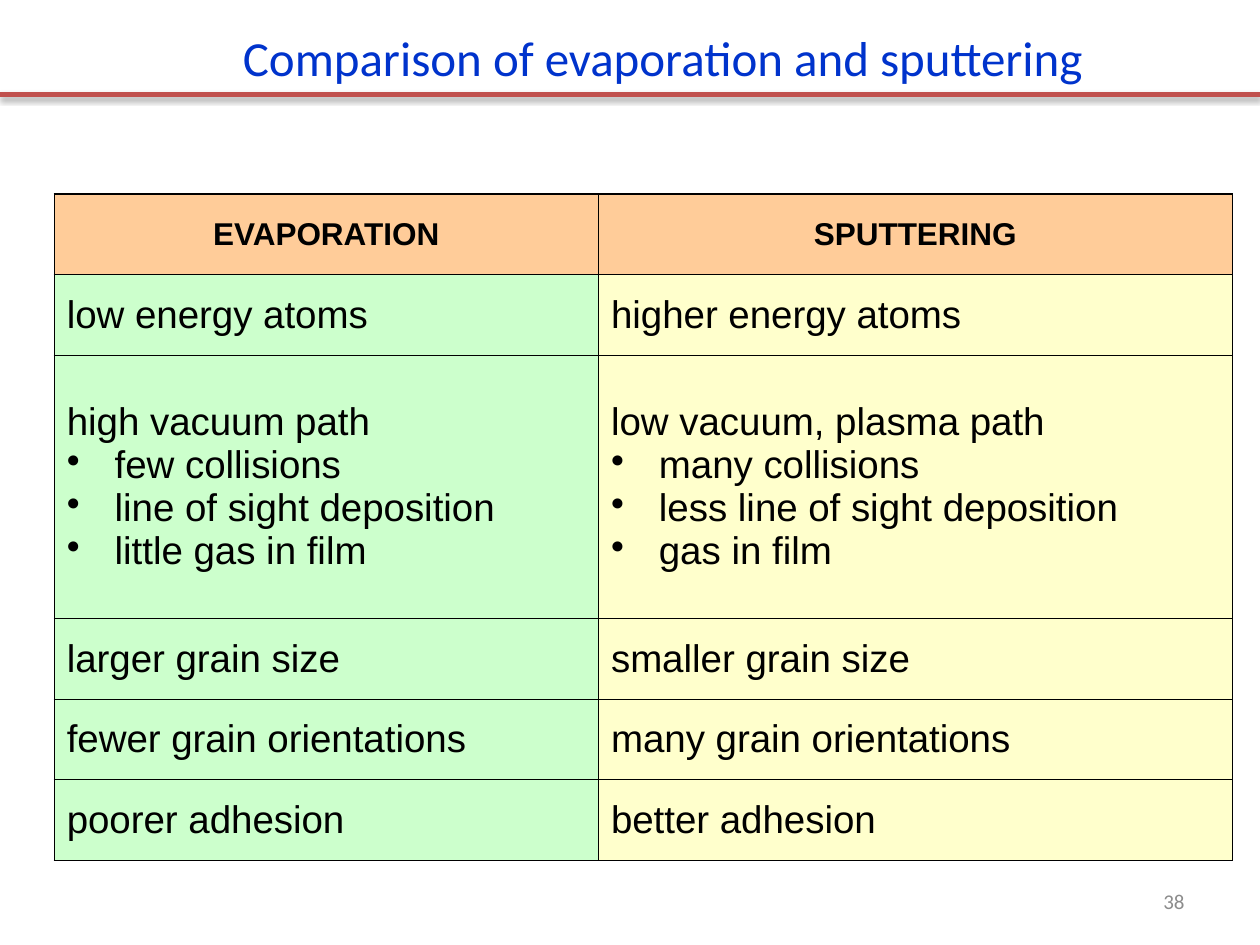
from lxml import etree
from pptx import Presentation
from pptx import util as u
from pptx.dml.color import RGBColor
from pptx.enum import shapes, text
from pptx.oxml import parse_xml
from pptx.oxml.ns import qn

TITLE = "Comparison of evaporation and sputtering"
PAGE = "38"
HEADERS = ("EVAPORATION", "SPUTTERING")
ROWS = [
    (["low energy atoms"], ["higher energy atoms"]),
    (["high vacuum path", "few collisions", "line of sight deposition", "little gas in film"],
     ["low vacuum, plasma path", "many collisions", "less line of sight deposition", "gas in film"]),
    (["larger grain size"], ["smaller grain size"]),
    (["fewer grain orientations"], ["many grain orientations"]),
    (["poorer adhesion"], ["better adhesion"]),
]
COLUMN_WIDTHS = (4.32, 5.03)
ROW_HEIGHT, TALL_ROW_HEIGHT = 0.64, 2.09
TABLE_LEFT, TABLE_TOP = 0.43, 1.54
INDENT = u.Inches(0.38)

BLACK = RGBColor(0x00, 0x00, 0x00)
BLUE = RGBColor(0x00, 0x33, 0xCC)
RED = RGBColor(0xC0, 0x50, 0x4D)
GREY = RGBColor(0x8C, 0x8C, 0x8C)
ORANGE = RGBColor(0xFF, 0xCC, 0x99)
GREEN = RGBColor(0xCC, 0xFF, 0xCC)
YELLOW = RGBColor(0xFF, 0xFF, 0xCC)

A = 'xmlns:a="http://schemas.openxmlformats.org/drawingml/2006/main"'
BORDER = (f'<a:%s {A} w="9525"><a:solidFill><a:srgbClr val="{BLACK}"/></a:solidFill>'
          '<a:prstDash val="solid"/></a:%s>')
RULE_SHADOW = (f'<a:effectLst {A}><a:outerShdw blurRad="{u.Pt(3.1)}" dist="{u.Pt(1.6)}" '
               f'dir="5400000" rotWithShape="0"><a:srgbClr val="{BLACK}">'
               '<a:alpha val="38000"/></a:srgbClr></a:outerShdw></a:effectLst>')


def style(paragraph, font_name, size, color, bold=False):
    for run in paragraph.runs:
        run.font.name = font_name
        run.font.size = u.Pt(size)
        run.font.color.rgb = color
        run.font.bold = bold


def fill_cell(cell, lines, fill, size, header=False):
    cell.vertical_anchor = text.MSO_ANCHOR.MIDDLE
    properties = cell._tc.get_or_add_tcPr()
    for side in ("lnL", "lnR", "lnT", "lnB"):
        properties.append(parse_xml(BORDER % (side, side)))
    cell.fill.solid()
    cell.fill.fore_color.rgb = fill
    cell.text_frame.text = "\n".join(lines)
    for index, paragraph in enumerate(cell.text_frame.paragraphs):
        paragraph.alignment = text.PP_ALIGN.CENTER if header else text.PP_ALIGN.LEFT
        layout = paragraph._p.get_or_add_pPr()
        layout.set("marL", str(INDENT))
        layout.set("indent", str(-INDENT))
        if index:
            etree.SubElement(layout, qn("a:buChar")).set("char", "•")
        else:
            etree.SubElement(layout, qn("a:buNone"))
        style(paragraph, "Arial", size, BLACK, header)


def add_comparison(slide):
    heights = [ROW_HEIGHT] + [TALL_ROW_HEIGHT if len(left) > 1 else ROW_HEIGHT for left, _ in ROWS]
    table = slide.shapes.add_table(
        len(heights), len(HEADERS), u.Inches(TABLE_LEFT), u.Inches(TABLE_TOP),
        u.Inches(sum(COLUMN_WIDTHS)), u.Inches(sum(heights))).table
    for column, width in zip(table.columns, COLUMN_WIDTHS):
        column.width = u.Inches(width)
    for row, height in zip(table.rows, heights):
        row.height = u.Inches(height)
    for column, header in enumerate(HEADERS):
        fill_cell(table.cell(0, column), [header], ORANGE, 18, header=True)
    for row, entries in enumerate(ROWS, start=1):
        for column, (lines, fill) in enumerate(zip(entries, (GREEN, YELLOW))):
            fill_cell(table.cell(row, column), lines, fill, 22)


def add_label(slide, words, box, size, color, align, anchor, wrap):
    frame = slide.shapes.add_textbox(*map(u.Inches, box)).text_frame
    frame.word_wrap = wrap
    frame.vertical_anchor = anchor
    frame.text = words
    frame.paragraphs[0].alignment = align
    style(frame.paragraphs[0], "Calibri", size, color)
    return frame


def main():
    deck = Presentation()
    deck.slide_width, deck.slide_height = u.Inches(10), u.Inches(7.5)
    slide = deck.slides.add_slide(deck.slide_layouts[6])

    add_comparison(slide)

    rule_y = deck.slide_height // 10
    rule = slide.shapes.add_connector(
        shapes.MSO_CONNECTOR.STRAIGHT, 0, rule_y, deck.slide_width, rule_y)
    rule.line.color.rgb = RED
    rule.line.width = u.Pt(3)
    rule._element.spPr.append(parse_xml(RULE_SHADOW))

    title = add_label(slide, TITLE, (1.83, 0.17, 6.97, 0.57), 28, BLUE,
                      text.PP_ALIGN.LEFT, text.MSO_ANCHOR.TOP, False)
    title.auto_size = text.MSO_AUTO_SIZE.SHAPE_TO_FIT_TEXT
    add_label(slide, PAGE, (7.17, 6.95, 2.33, 0.4), 12, GREY,
              text.PP_ALIGN.RIGHT, text.MSO_ANCHOR.MIDDLE, True)

    deck.save("out.pptx")


if __name__ == "__main__":
    main()
